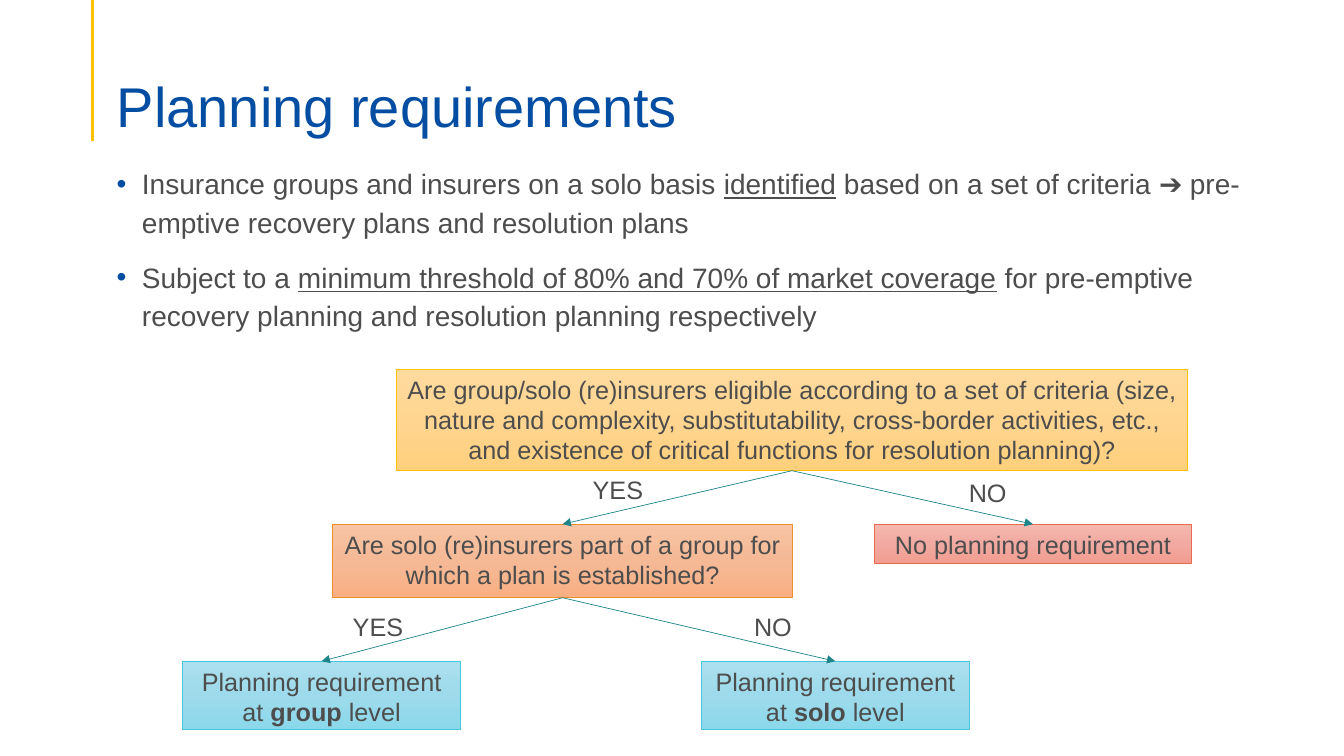
import copy

import pptx
import pptx.dml.color
import pptx.enum.shapes
import pptx.enum.text
import pptx.oxml
import pptx.oxml.ns
import pptx.util

Inches = pptx.util.Inches
Pt = pptx.util.Pt
RGBColor = pptx.dml.color.RGBColor
PP_ALIGN = pptx.enum.text.PP_ALIGN
ANCHOR = pptx.enum.text.MSO_ANCHOR
AUTO_SIZE = pptx.enum.text.MSO_AUTO_SIZE
STRAIGHT = pptx.enum.shapes.MSO_CONNECTOR.STRAIGHT
RECTANGLE = pptx.enum.shapes.MSO_SHAPE.RECTANGLE
qn = pptx.oxml.ns.qn

FONT = "Arial"
BLUE = RGBColor(0x03, 0x4E, 0xA2)
GREY = RGBColor(0x4D, 0x4D, 0x4D)
GOLD = RGBColor(0xFF, 0xC0, 0x00)
TEAL = RGBColor(0x1E, 0x85, 0x8B)

# Each scheme: outline, then gradient from top to bottom
YELLOW_SCHEME = (GOLD, RGBColor(0xFF, 0xDB, 0x9E), RGBColor(0xFF, 0xD5, 0x90),
                 RGBColor(0xFF, 0xD0, 0x7C))
ORANGE_SCHEME = (RGBColor(0xED, 0x8D, 0x2F), RGBColor(0xF7, 0xC4, 0xA4),
                 RGBColor(0xF5, 0xB9, 0x96), RGBColor(0xF8, 0xAF, 0x82))
RED_SCHEME = (RGBColor(0xE7, 0x6C, 0x53), RGBColor(0xF4, 0xB8, 0xAF),
              RGBColor(0xF1, 0xAA, 0xA1), RGBColor(0xF2, 0x9C, 0x8F))
CYAN_SCHEME = (RGBColor(0x4B, 0xC5, 0xDE), RGBColor(0xAC, 0xE0, 0xEE),
               RGBColor(0x9D, 0xDA, 0xEB), RGBColor(0x8B, 0xD8, 0xEB))


def add_text(paragraph, text, size=18, color=GREY, bold=False, underline=False):
    run = paragraph.add_run()
    run.text = text
    font = run.font
    font.name, font.size, font.color.rgb = FONT, Pt(size), color
    font.bold, font.underline = bold, underline


def add_title(slide, text):
    title = slide.shapes.title
    title.left, title.top = Inches(1.06), Inches(0.53)
    title.width, title.height = Inches(11.5), Inches(0.86)
    frame = title.text_frame
    frame.auto_size = AUTO_SIZE.NONE
    frame.vertical_anchor = ANCHOR.BOTTOM
    frame.margin_bottom = 0
    heading = frame.paragraphs[0]
    heading.alignment = PP_ALIGN.LEFT
    heading.line_spacing = 0.9
    add_text(heading, text, size=40, color=BLUE)


def add_line(slide, start, end, color, width):
    line = slide.shapes.add_connector(
        STRAIGHT, *(Inches(value) for value in (*start, *end)))
    line.line.color.rgb = color
    line.line.width = Pt(width)
    line._element.spPr.append(pptx.oxml.parse_xml(
        f'<a:effectLst {pptx.oxml.ns.nsdecls("a")}/>'))
    return line


def add_arrow(slide, question, answer):
    arrow = add_line(slide, (0, 0), (1, 1), TEAL, 0.5)
    arrow.begin_connect(question, 2)
    arrow.end_connect(answer, 0)
    arrow.line._get_or_add_ln().append(pptx.oxml.parse_xml(
        f'<a:tailEnd {pptx.oxml.ns.nsdecls("a")} type="triangle"/>'))


def fill_gradient(box, colors):
    box.fill.gradient()
    box.fill.gradient_angle = 270
    stop_list = box._element.spPr.find(".//" + qn("a:gsLst"))
    stop_list.insert(1, copy.deepcopy(stop_list[0]))
    for stop, position, color in zip(box.fill.gradient_stops, (0, 0.5, 1), colors):
        stop.position = position
        stop.color.rgb = color


def add_box(slide, left, top, width, height, scheme, *parts):
    """Draw a decision box; every second text part is bold."""
    box = slide.shapes.add_shape(
        RECTANGLE, Inches(left), Inches(top), Inches(width), Inches(height))
    outline, *gradient = scheme
    box.shadow.inherit = False
    box.line.color.rgb = outline
    box.line.width = Pt(0.5)
    fill_gradient(box, gradient)
    frame = box.text_frame
    frame.word_wrap = True
    frame.auto_size = AUTO_SIZE.SHAPE_TO_FIT_TEXT
    frame.vertical_anchor = ANCHOR.TOP
    paragraph = frame.paragraphs[0]
    paragraph.alignment = PP_ALIGN.CENTER
    for index, part in enumerate(parts):
        add_text(paragraph, part, bold=index % 2 == 1)
    return box


def add_text_frame(slide, left, top, width, height):
    frame = slide.shapes.add_textbox(
        Inches(left), Inches(top), Inches(width), Inches(height)).text_frame
    frame.word_wrap = True
    return frame


def add_bullets(slide, bullets):
    """Write bulleted paragraphs; every second text part is underlined."""
    frame = add_text_frame(slide, 1.06, 1.56, 11.5, 2.19)
    for number, parts in enumerate(bullets):
        paragraph = frame.add_paragraph() if number else frame.paragraphs[0]
        paragraph.line_spacing = 1.14
        paragraph.space_before = Pt(6 if number else 0)
        paragraph.space_after = Pt(6)
        properties = paragraph._p.get_or_add_pPr()
        properties.set("marL", str(Inches(0.25)))
        properties.set("indent", str(-Inches(0.25)))
        namespace = pptx.oxml.ns.nsdecls("a")
        for xml in (f'<a:buClr {namespace}><a:srgbClr val="{BLUE}"/></a:buClr>',
                    f'<a:buFont {namespace} typeface="{FONT}"/>',
                    f'<a:buChar {namespace} char="•"/>'):
            properties.append(pptx.oxml.parse_xml(xml))
        for index, part in enumerate(parts):
            add_text(paragraph, part, size=20, underline=index % 2 == 1)


def main():
    deck = pptx.Presentation()
    deck.slide_width, deck.slide_height = Inches(13.33), Inches(7.5)
    slide = deck.slides.add_slide(deck.slide_layouts[5])

    # Heading and accent line
    add_line(slide, (0.92, 0), (0.92, 1.4), GOLD, 2.25)
    add_title(slide, "Planning requirements")

    # Decision tree boxes
    eligible = add_box(
        slide, 3.93, 3.66, 7.85, 1.01, YELLOW_SCHEME,
        "Are group/solo (re)insurers eligible according to a set of criteria "
        "(size, nature and complexity, substitutability, cross-border activities, "
        "etc., and existence of critical functions for resolution planning)?")
    part_of_group = add_box(
        slide, 3.3, 5.2, 4.56, 0.73, ORANGE_SCHEME,
        "Are solo (re)insurers part of a group for which a plan is established?")
    group_level = add_box(slide, 1.81, 6.56, 2.76, 0.68, CYAN_SCHEME,
                          "Planning requirement at ", "group ", "level")
    solo_level = add_box(slide, 6.96, 6.56, 2.65, 0.68, CYAN_SCHEME,
                         "Planning requirement at ", "solo ", "level")
    no_requirement = add_box(slide, 8.67, 5.2, 3.15, 0.39, RED_SCHEME,
                             "No planning requirement")

    # Branches and their answers
    for question, outcome, answer, left, top in (
            (eligible, part_of_group, "YES", 5.78, 4.66),
            (eligible, no_requirement, "NO", 9.51, 4.69),
            (part_of_group, group_level, "YES", 3.4, 6.02),
            (part_of_group, solo_level, "NO", 7.38, 6.02)):
        add_arrow(slide, question, outcome)
        label = add_text_frame(slide, left, top, 1.18, 0.39)
        add_text(label.paragraphs[0], answer)

    # Key points
    add_bullets(slide, (
        ("Insurance groups and insurers on a solo basis ", "identified",
         " based on a set of criteria ➔ pre-emptive recovery plans and "
         "resolution plans"),
        ("Subject to a ", "minimum threshold of 80% and 70% of market coverage",
         " for pre-emptive recovery planning and resolution planning "
         "respectively")))

    deck.save("out.pptx")


if __name__ == "__main__":
    main()
